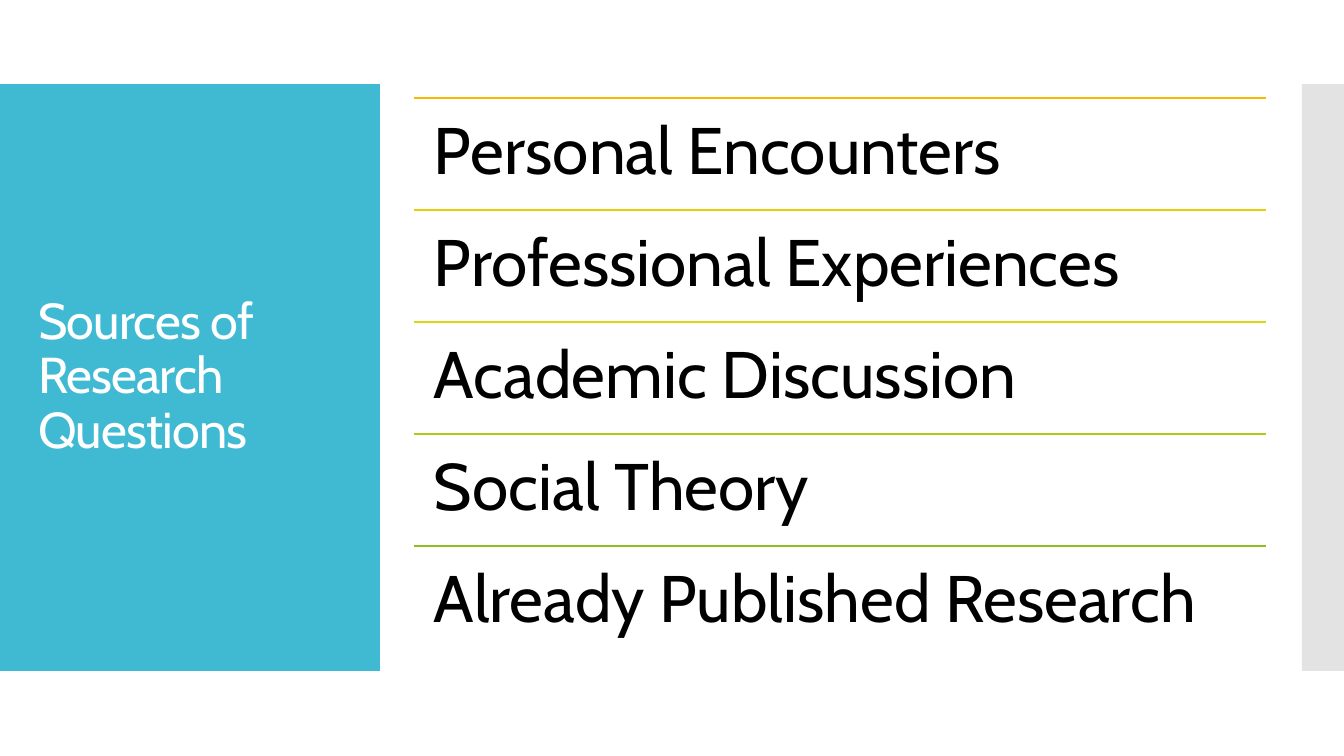
from pptx import Presentation
from pptx.dml.color import RGBColor as Rgb
from pptx.enum.shapes import MSO_CONNECTOR as Conn, MSO_SHAPE as Shape
from pptx.enum.text import MSO_ANCHOR as Anchor
from pptx.oxml.xmlchemy import OxmlElement as Elem
from pptx.util import Emu, Pt

TITLE = "Sources of Research Questions"
TEAL = Rgb(0x40, 0xBA, 0xD2)
GREY = Rgb(0xC8, 0xC8, 0xC8)
WHITE = Rgb(0xFF, 0xFF, 0xFF)
BLACK = Rgb(0, 0, 0)
ROWS = [
    ("Personal Encounters", Rgb(0xFA, 0xB9, 0x00)),
    ("Professional Experiences", Rgb(0xE9, 0xCE, 0x0A)),
    ("Academic Discussion", Rgb(0xD7, 0xD9, 0x13)),
    ("Social Theory", Rgb(0xB0, 0xCA, 0x1B)),
    ("Already Published Research", Rgb(0x90, 0xBB, 0x23)),
]
FONT = "Cabin"
WIDE, HIGH = 1344, 756
LEFT, TOP, SPAN, STEP = 414, 98, 852, 112
SCALE = 12192000 / WIDE


def px(*nums):
    return [Emu(round(n * SCALE)) for n in nums]


def panel(slide, box, color):
    rect = slide.shapes.add_shape(Shape.RECTANGLE, *px(*box))
    rect.shadow.inherit = False
    rect.fill.solid()
    rect.fill.fore_color.rgb = color
    rect.line.fill.background()
    return rect


def write(slide, box, text, size, color, pad, anchor):
    frame = slide.shapes.add_textbox(*px(*box)).text_frame
    frame.word_wrap = True
    frame.vertical_anchor = anchor
    frame.margin_left, frame.margin_top = px(pad[0], pad[1])
    frame.margin_right, frame.margin_bottom = px(pad[0], pad[1])
    frame.text = text
    para = frame.paragraphs[0]
    para.line_spacing = 0.9
    run = para.runs[0]
    run.font.name = FONT
    run.font.size = Pt(size)
    run.font.color.rgb = color
    return run


def rule(slide, y, color):
    line = slide.shapes.add_connector(Conn.STRAIGHT, *px(LEFT, y, LEFT + SPAN, y))
    line.line.color.rgb = color
    line.line.width = Pt(0.85)
    line._element.spPr.append(Elem("a:effectLst"))


def main():
    deck = Presentation()
    deck.slide_width, deck.slide_height = px(WIDE, HIGH)
    slide = deck.slides.add_slide(deck.slide_layouts[6])

    panel(slide, (0, 84, 380, 587), TEAL)
    edge = panel(slide, (1302, 84, 42, 587), GREY)
    alpha = Elem("a:alpha")
    alpha.set("val", "50000")
    edge.fill._xPr.find(".//{*}srgbClr").append(alpha)

    head = write(slide, (28, 124, 325, 507), TITLE, 36, WHITE, (10, 5), Anchor.MIDDLE)
    head.font._element.set("spc", "-60")

    for i, (text, color) in enumerate(ROWS):
        y = TOP + i * STEP
        rule(slide, y, color)
        write(slide, (LEFT, y, SPAN, STEP), text, 47, BLACK, (20, 20), Anchor.TOP)

    deck.save("out.pptx")


if __name__ == "__main__":
    main()
